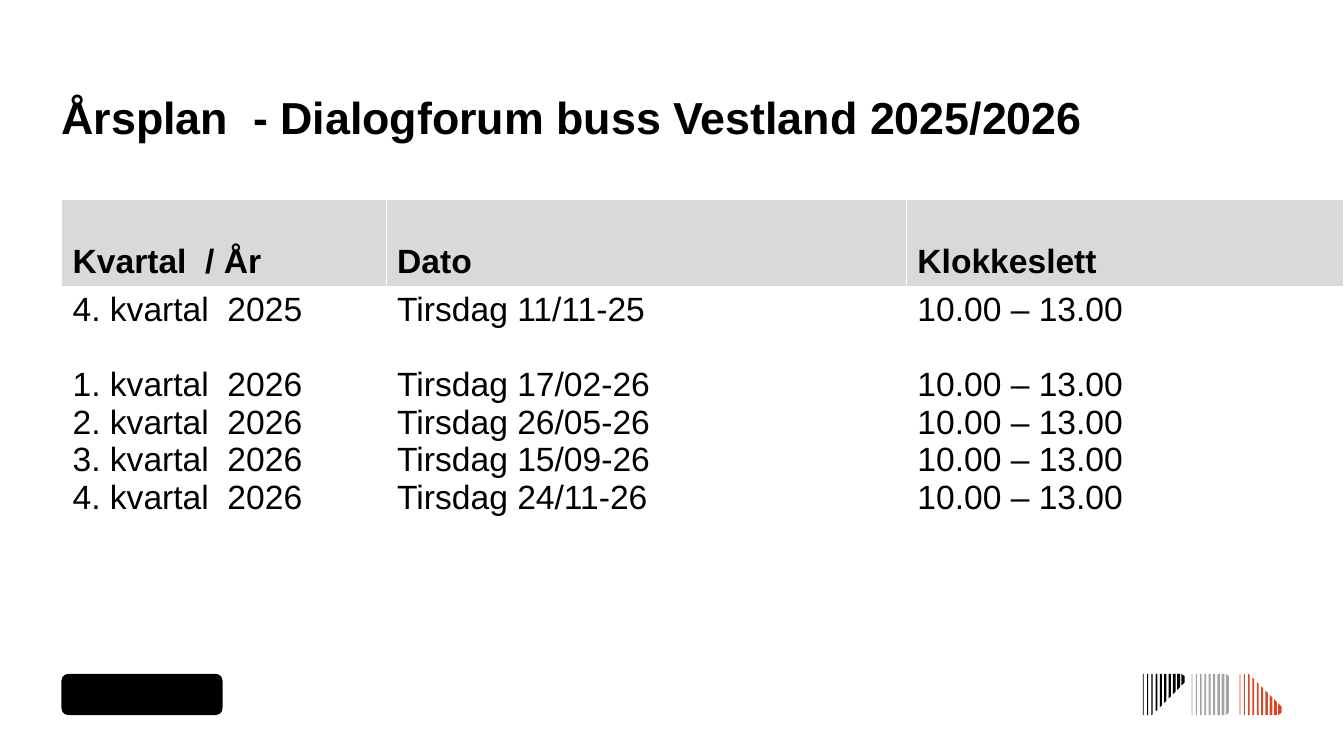
from lxml.etree import SubElement
from pptx import Presentation
from pptx.dml.color import RGBColor
from pptx.enum.shapes import MSO_SHAPE as Shape
from pptx.enum.text import MSO_ANCHOR as Anchor
from pptx.oxml.ns import qn
from pptx.util import Cm, Pt

FONT = "Arial"
LEFT = 1.55
TEXT_SIZE = 24
ROW_LINE = 26.8

HEADINGS = ["Kvartal  / År", "Dato", "Klokkeslett"]
HOURS = "10.00 – 13.00"
MEETINGS = [
    ("4. kvartal  2025", "Tirsdag 11/11-25", HOURS),
    ("1. kvartal  2026", "Tirsdag 17/02-26", HOURS),
    ("2. kvartal  2026", "Tirsdag 26/05-26", HOURS),
    ("3. kvartal  2026", "Tirsdag 15/09-26", HOURS),
    ("4. kvartal  2026", "Tirsdag 24/11-26", HOURS),
]


def color(hex_value):
    return RGBColor.from_string(hex_value)


def paint(shape, hex_value):
    shape.shadow.inherit = False
    shape.fill.solid()
    shape.fill.fore_color.rgb = color(hex_value)
    shape.line.fill.background()


def add_span(para, text, size, bold=False):
    span = para.add_run()
    span.text = text
    span.font.name = FONT
    span.font.size = Pt(size)
    span.font.bold = bold
    span.font.color.rgb = color("000000")


def add_title(page, left, top, width, height):
    box = page.shapes.add_textbox(Cm(left), Cm(top), Cm(width), Cm(height))
    frame = box.text_frame
    frame.word_wrap = True
    frame.vertical_anchor = Anchor.MIDDLE
    frame.margin_left = frame.margin_right = 0
    frame.margin_top = frame.margin_bottom = 0
    para = frame.paragraphs[0]
    para.line_spacing = Pt(32)
    add_span(para, "Årsplan  - Dialogforum buss Vestland 2025/2026", 32, True)


def style_cell(cell, fill=None):
    cell.margin_left = cell.margin_right = Cm(0.28)
    cell.margin_top = cell.margin_bottom = Cm(0.13)
    properties = cell._tc.get_or_add_tcPr()
    for side in ("a:lnL", "a:lnR", "a:lnT", "a:lnB"):
        border = SubElement(properties, qn(side), w=str(Pt(0.5)))
        solid = SubElement(border, qn("a:solidFill"))
        SubElement(solid, qn("a:srgbClr"), val="FFFFFF")
    if fill:
        cell.fill.solid()
        cell.fill.fore_color.rgb = color(fill)
    else:
        cell.fill.background()


def add_schedule(page, left, top, widths, heights):
    table = page.shapes.add_table(
        2, len(widths), Cm(left), Cm(top), Cm(sum(widths)), Cm(sum(heights))
    ).table
    for row, height in zip(table.rows, heights):
        row.height = Cm(height)
    for index, width in enumerate(widths):
        table.columns[index].width = Cm(width)

        # Heading
        heading = table.cell(0, index)
        style_cell(heading, "D9D9D9")
        heading.vertical_anchor = Anchor.BOTTOM
        add_span(heading.text_frame.paragraphs[0], HEADINGS[index], TEXT_SIZE, True)

        # Meetings, with a gap of one line after the first year
        body = table.cell(1, index)
        style_cell(body)
        frame = body.text_frame
        for number, meeting in enumerate(MEETINGS):
            para = frame.add_paragraph() if number else frame.paragraphs[0]
            if number == 1:
                para.space_before = Pt(ROW_LINE)
            add_span(para, meeting[index], TEXT_SIZE)


def add_stripes(page, left, top, height, count, hex_value, cut=None):
    """Upright stripes that widen to the right; cut slants one edge."""
    pitch, corner = 0.108, 0.06
    contours = []
    for index in range(count):
        start = index * pitch
        end = start + 0.02 + 0.007 * index
        slant_start, slant_end = max(0, start - 0.23), max(0, end - 0.23)
        round_off = corner if index == count - 1 else 0
        if cut == "top":
            upper, lower = (slant_start, slant_end), (height, height - round_off)
        elif cut == "bottom":
            upper, lower = (0, round_off), (height - slant_start, height - slant_end)
        else:
            upper, lower = (0, round_off), (height, height - round_off)
        corners = [(start, upper[0]), (end, upper[1]), (end, lower[1]), (start, lower[0])]
        contours.append([(Cm(left + x), Cm(top + y)) for x, y in corners])

    builder = page.shapes.build_freeform(*contours[0][0])
    for number, contour in enumerate(contours):
        if number:
            builder.move_to(*contour[0])
        builder.add_line_segments(contour[1:], close=True)
    paint(builder.convert_to_shape(), hex_value)


def add_footer(page, left, top, height):
    # Plain mark at the left
    mark = page.shapes.add_shape(
        Shape.ROUNDED_RECTANGLE, Cm(left), Cm(top), Cm(4.06), Cm(height)
    )
    paint(mark, "000000")

    # Striped ornaments at the right
    add_stripes(page, left + 27.25, top, height, 10, "000000", "bottom")
    add_stripes(page, left + 28.48, top, height, 9, "A4A4A4")
    add_stripes(page, left + 29.69, top, height, 10, "D2492A", "top")


def main():
    deck = Presentation()
    deck.slide_width, deck.slide_height = Cm(33.87), Cm(19.05)
    page = deck.slides.add_slide(deck.slide_layouts[6])
    add_footer(page, LEFT, 16.98, 1.04)
    add_title(page, LEFT, 1.55, 30.76, 3)
    add_schedule(page, LEFT, 5.03, [8.18, 13.11, 11.02], [2.18, 7.06])
    deck.save("out.pptx")


if __name__ == "__main__":
    main()
